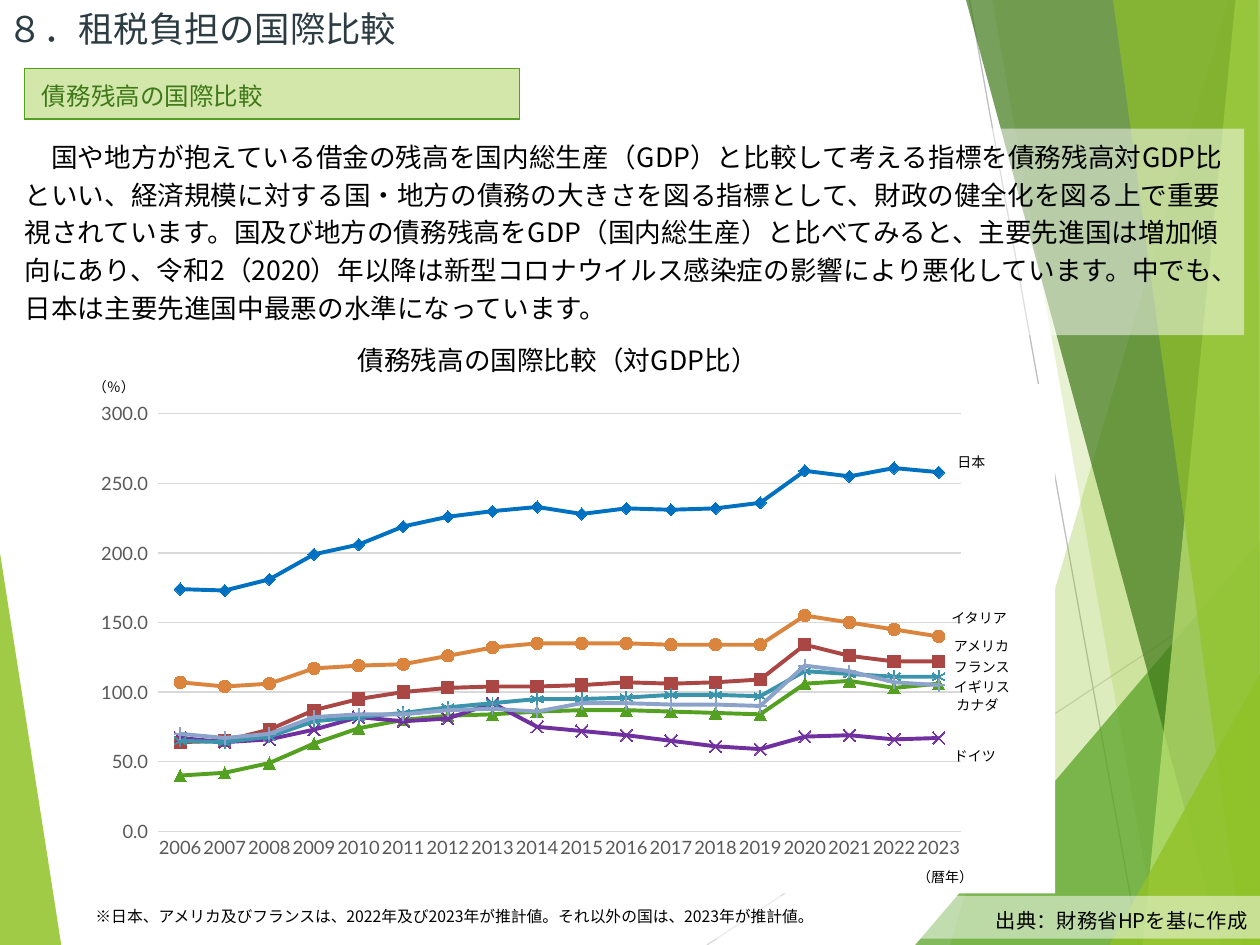
import pptx
import pptx.chart.data
import pptx.dml.color
import pptx.enum.chart
import pptx.enum.shapes
import pptx.enum.text
import pptx.oxml
import pptx.oxml.ns
import pptx.util

Pt = pptx.util.Pt
qn = pptx.oxml.ns.qn
Marker = pptx.enum.chart.XL_MARKER_STYLE
Align = pptx.enum.text.PP_ALIGN
Fit = pptx.enum.text.MSO_AUTO_SIZE

COLORS = {
    "black": "000000", "white": "FFFFFF", "title": "2C3C43", "axis": "595959",
    "grid": "D9D9D9", "ray": "BFBFBF", "lime": "90C226", "green": "54A021",
    "forest": "3F7819", "pale": "C0E474", "banner": "D2E7A9",
    "blue": "0070C0", "red": "AA4643", "purple": "7030A0", "teal": "3994AC",
    "orange": "DB843D", "lavender": "8BA3CA",
}
CJK, LATO = "Noto Sans CJK JP", "Lato"

# Content
TITLE = " ８．租税負担の国際比較"
BANNER = "債務残高の国際比較"
CHART_TITLE = "債務残高の国際比較（対GDP比）"
BODY = (
    "　国や地方が抱えている借金の残高を国内総生産（GDP）と比較して考える指標を債務残高対GDP比といい、"
    "経済規模に対する国・地方の債務の大きさを図る指標として、財政の健全化を図る上で重要視されています。"
    "国及び地方の債務残高をGDP（国内総生産）と比べてみると、主要先進国は増加傾向にあり、"
    "令和2（2020）年以降は新型コロナウイルス感染症の影響により悪化しています。"
    "中でも、日本は主要先進国中最悪の水準になっています。"
)
SOURCE = "出典：財務省HPを基に作成"
NOTE = "※日本、アメリカ及びフランスは、2022年及び2023年が推計値。それ以外の国は、2023年が推計値。"
YEARS = [str(year) for year in range(2006, 2024)]
DEBT = [  # country, colour, marker, filled marker, values
    ("日本", "blue", Marker.DIAMOND, True,
     [174, 173, 181, 199, 206, 219, 226, 230, 233, 228, 232, 231, 232, 236, 259, 255, 261, 258]),
    ("アメリカ", "red", Marker.SQUARE, True,
     [64, 65, 73, 87, 95, 100, 103, 104, 104, 105, 107, 106, 107, 109, 134, 126, 122, 122]),
    ("イギリス", "green", Marker.TRIANGLE, True,
     [40, 42, 49, 63, 74, 80, 83, 84, 86, 87, 87, 86, 85, 84, 106, 108, 103, 106]),
    ("ドイツ", "purple", Marker.X, False,
     [67, 64, 66, 73, 82, 79, 81, 92, 75, 72, 69, 65, 61, 59, 68, 69, 66, 67]),
    ("フランス", "teal", Marker.STAR, False,
     [65, 64, 68, 79, 82, 85, 89, 92, 95, 95, 96, 98, 98, 97, 115, 113, 111, 111]),
    ("イタリア", "orange", Marker.CIRCLE, True,
     [107, 104, 106, 117, 119, 120, 126, 132, 135, 135, 135, 134, 134, 134, 155, 150, 145, 140]),
    ("カナダ", "lavender", Marker.PLUS, False,
     [70, 67, 70, 82, 84, 84, 87, 88, 86, 92, 92, 91, 91, 90, 119, 115, 107, 105]),
]
CHART_LABELS = [  # text, left, top, width
    ("（％）", 46, 213, 39), ("（暦年）", 517, 493, 47), ("日本", 540, 255.5, 31),
    ("イタリア", 536.5, 345, 47), ("アメリカ", 538, 361, 47), ("フランス", 538, 373, 47),
    ("カナダ", 539.5, 394.5, 39), ("イギリス", 538, 384, 47), ("ドイツ", 538, 423.5, 39),
]

# Background facets: colour, opacity %, corners
W, H = 720, 540
FACETS = [
    ("lime", 85, [(0, 316), (35, H), (0, H)]),
    ("lime", 30, [(702, 0), (543, H), (W, H), (W, 0)]),
    ("lime", 20, [(567, 0), (662, H), (W, H), (W, 0)]),
    ("green", 72, [(523, H), (W, 309), (W, H)]),
    ("forest", 70, [(552, 0), (698, H), (W, H), (W, 0)]),
    ("pale", 70, [(706, 0), (653, H), (W, H), (W, 0)]),
    ("lime", 65, [(636, 0), (710, H), (W, H), (719, 0)]),
    ("lime", 80, [(634, H), (W, 385), (W, H)]),
]
RAYS = [("grid", (404, H), (W, 330)), ("ray", (554, 0), (651, H))]

prs = pptx.Presentation()
prs.slide_width, prs.slide_height = Pt(W), Pt(H)
slide = prs.slides.add_slide(prs.slide_layouts[6])
shapes = slide.shapes


def rgb(name):
    return pptx.dml.color.RGBColor.from_string(COLORS[name])


def paint(fill, color, opacity=100):
    fill.solid()
    fill.fore_color.rgb = rgb(color)
    if opacity < 100:
        clr = fill._xPr.find(qn("a:solidFill"))[0]
        clr.append(pptx.oxml.parse_xml(
            f'<a:alpha {pptx.oxml.ns.nsdecls("a")} val="{opacity * 1000}"/>'))


def stroke(line, color, width):
    line.color.rgb = rgb(color)
    line.width = Pt(width)


def panel(shape, color, opacity=100):
    shape.shadow.inherit = False
    paint(shape.fill, color, opacity)
    shape.line.fill.background()
    return shape


def box(left, top, width, height, opacity=None):
    place = Pt(left), Pt(top), Pt(width), Pt(height)
    if opacity is None:
        return shapes.add_textbox(*place)
    return panel(shapes.add_shape(pptx.enum.shapes.MSO_SHAPE.RECTANGLE, *place), "white", opacity)


def write(frame, text, size, color="black", font=CJK, align=Align.LEFT, spacing=None,
          wrap=True, fit=Fit.SHAPE_TO_FIT_TEXT, anchor=pptx.enum.text.MSO_ANCHOR.TOP, inset=None):
    frame.word_wrap, frame.auto_size, frame.vertical_anchor = wrap, fit, anchor
    if inset is not None:
        frame.margin_left = frame.margin_right = Pt(inset)
        frame.margin_top = frame.margin_bottom = Pt(inset)
    paragraph = frame.paragraphs[0]
    paragraph.alignment = align
    if spacing:
        paragraph.line_spacing = Pt(spacing)
    run = paragraph.add_run()
    run.text = text
    run.font.size, run.font.name, run.font.color.rgb = Pt(size), font, rgb(color)
    run._r.rPr.append(pptx.oxml.parse_xml(
        f'<a:ea {pptx.oxml.ns.nsdecls("a")} typeface="{CJK}"/>'))


# Background
def draw_facet(color, opacity, corners):
    outline = shapes.build_freeform(*corners[0], scale=12700)
    outline.add_line_segments(corners[1:], close=True)
    panel(outline.convert_to_shape(), color, opacity)


draw_facet(*FACETS[0])
for color, start, end in RAYS:
    ray = shapes.add_connector(pptx.enum.shapes.MSO_CONNECTOR.STRAIGHT,
                               *(Pt(v) for v in start + end))
    stroke(ray.line, color, 0.75)
    ray._element.spPr.append(pptx.oxml.parse_xml(
        f'<a:effectLst {pptx.oxml.ns.nsdecls("a")}/>'))
for facet in FACETS[1:]:
    draw_facet(*facet)

# Chart heading
write(box(161, 189.5, 315.5, 29.5, 50).text_frame, CHART_TITLE, 15.2,
      align=Align.CENTER, spacing=21.6)

# Section banner
banner = shapes.add_table(1, 1, Pt(14), Pt(39), Pt(283), Pt(29)).table
banner.first_row = banner.horz_banding = False
cell = banner.cell(0, 0)
cell.margin_left = cell.margin_right = Pt(10)
cell.margin_top = cell.margin_bottom = Pt(5)
write(cell.text_frame, BANNER, 14, "forest", fit=None)
edges = [pptx.oxml.parse_xml(
    f'<a:{side} {pptx.oxml.ns.nsdecls("a")} w="12700"><a:solidFill>'
    f'<a:srgbClr val="{COLORS["green"]}"/></a:solidFill></a:{side}>')
    for side in ("lnL", "lnR", "lnT", "lnB")]
cell._tc.get_or_add_tcPr().extend(edges)
paint(cell.fill, "banner")

# Body, source, title and note
write(box(7, 73.5, 704, 118, 50).text_frame, BODY, 15.2, spacing=21.6)
write(box(230.5, 512, 489.5, 24.5, 50).text_frame, SOURCE, 11.6, align=Align.RIGHT, spacing=17.3)
write(box(0, 0, 288, 32.5).text_frame, TITLE, 20.2, "title", fit=Fit.NONE,
      anchor=pptx.enum.text.MSO_ANCHOR.MIDDLE, inset=0)
write(box(47.5, 508, 493, 23).text_frame, NOTE, 9, spacing=17.3)

# Debt chart on a white panel
box(36, 219.5, 567, 291, 100)
data = pptx.chart.data.CategoryChartData()
data.categories = YEARS
for country, _, _, _, values in DEBT:
    data.add_series(country, values)
chart = shapes.add_chart(pptx.enum.chart.XL_CHART_TYPE.LINE_MARKERS,
                         Pt(54.5), Pt(219), Pt(510), Pt(291), data).chart
chart.has_legend = chart.has_title = False
chart.font.size, chart.font.name, chart.font.color.rgb = Pt(10), LATO, rgb("black")
chart.plots[0].vary_by_categories = False
for series, (_, color, marker, filled, _) in zip(chart.plots[0].series, DEBT):
    series.smooth = False
    stroke(series.format.line, color, 2.25)
    series.marker.style, series.marker.size = marker, 7
    stroke(series.marker.format.line, color, 0.75)
    if filled:
        paint(series.marker.format.fill, color)
    else:
        series.marker.format.fill.background()

years_axis, ratio_axis = chart.category_axis, chart.value_axis
for axis in (years_axis, ratio_axis):
    axis.major_tick_mark = axis.minor_tick_mark = pptx.enum.chart.XL_TICK_MARK.NONE
    font = axis.tick_labels.font
    font.size, font.name, font.color.rgb = Pt(10.5), LATO, rgb("axis")
stroke(years_axis.format.line, "grid", 0.75)
ratio_axis.format.line.fill.background()
ratio_axis.minimum_scale, ratio_axis.maximum_scale, ratio_axis.major_unit = 0, 300, 50
stroke(ratio_axis.major_gridlines.format.line, "grid", 0.75)
ratio_axis.tick_labels.number_format = "0.0_ "
ratio_axis.tick_labels.number_format_is_linked = False

plot_area = chart._chartSpace.chart.plotArea
for old in plot_area.findall(qn("c:layout")):
    plot_area.remove(old)
modes = "".join(f'<c:{m}Mode val="edge"/>' for m in "xy")
extent = "".join(f'<c:{k} val="{v}"/>' for k, v in zip("xywh", (0.07, 0.06, 0.9, 0.82)))
plot_area.insert(0, pptx.oxml.parse_xml(
    f'<c:layout {pptx.oxml.ns.nsdecls("c")}><c:manualLayout><c:layoutTarget val="inner"/>'
    f'{modes}{extent}</c:manualLayout></c:layout>'))

# Units and country names
for text, left, top, width in CHART_LABELS:
    write(box(left, top, width, 17).text_frame, text, 8, font=LATO, wrap=False)

prs.save("out.pptx")
